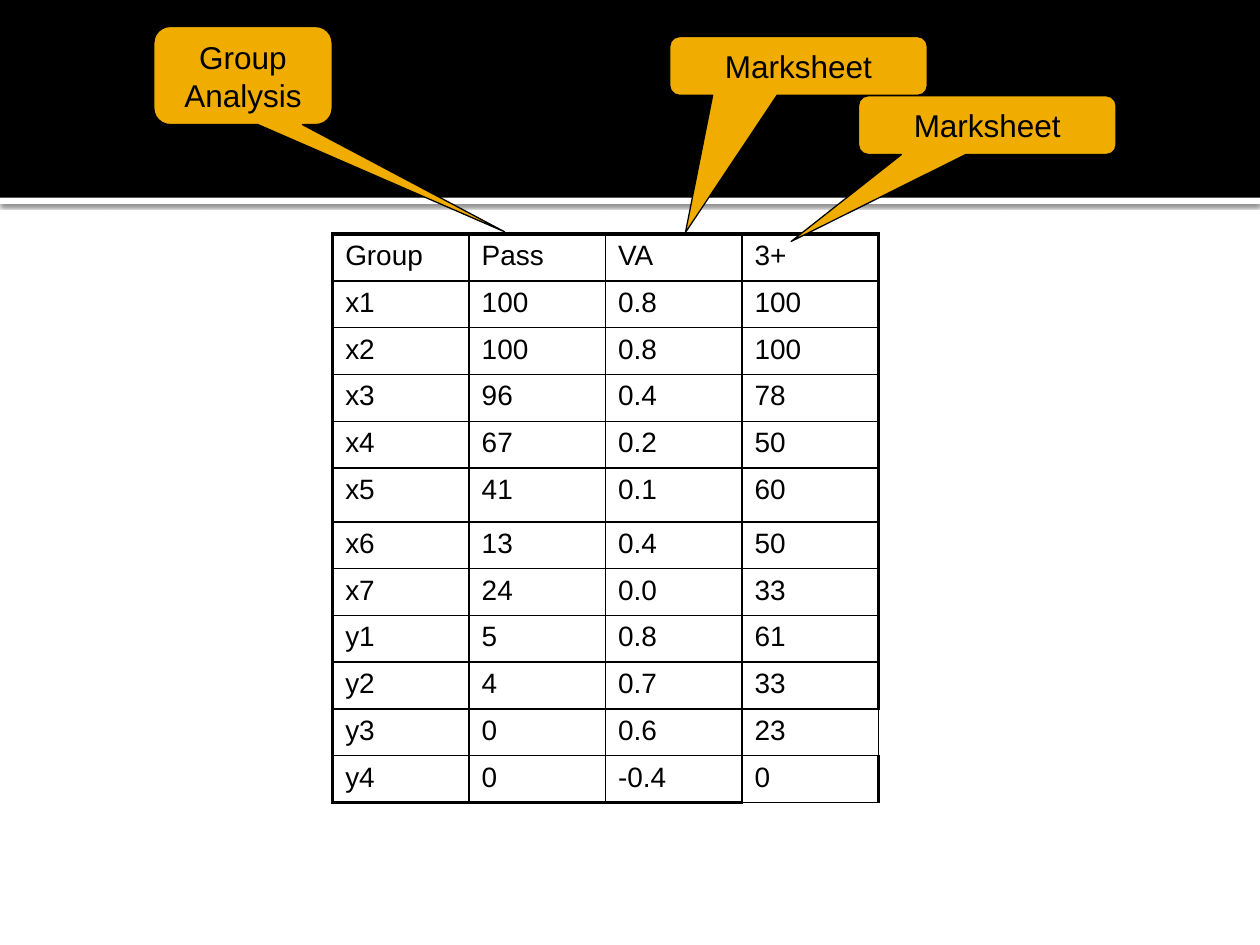
import pptx
import pptx.util
import pptx.dml.color
import pptx.enum.shapes
import pptx.enum.text
import pptx.oxml
import pptx.oxml.ns

Pt = pptx.util.Pt
SHAPES = pptx.enum.shapes.MSO_SHAPE
COLORS = {"ink": "000000", "paper": "FFFFFF", "callout": "F0AD00"}
FONT = "Arial"

ROWS = [
    ("Group", "Pass", "VA", "3+"),
    ("x1", "100", "0.8", "100"),
    ("x2", "100", "0.8", "100"),
    ("x3", "96", "0.4", "78"),
    ("x4", "67", "0.2", "50"),
    ("x5", "41", "0.1", "60"),
    ("x6", "13", "0.4", "50"),
    ("x7", "24", "0.0", "33"),
    ("y1", "5", "0.8", "61"),
    ("y2", "4", "0.7", "33"),
    ("y3", "0", "0.6", "23"),
    ("y4", "0", "-0.4", "0"),
]
# Text, (left, top, width, height), tip of the pointer
CALLOUTS = [
    ("Group\nAnalysis", (87.9, 15.2, 101.9, 56.0), (288.4, 132.5)),
    ("Marksheet", (382.7, 20.9, 147.2, 33.6), (391.7, 132.9)),
    ("Marksheet", (490.6, 54.7, 147.2, 33.6), (452.1, 138.0)),
]
TABLE_LEFT, TABLE_TOP = 190.1, 133.8
COLUMN_WIDTH, ROW_HEIGHT = 78, 26.75
TALL_ROW, TALL_HEIGHT = 5, 30.7
THIN, THICK = 1, 2.25
DRAWING = pptx.oxml.ns.nsdecls("a")


def color(name):
    return pptx.dml.color.RGBColor.from_string(COLORS[name])


def add_shape(slide, preset, box, fill):
    shape = slide.shapes.add_shape(preset, *map(Pt, box))
    shape.shadow.inherit = False
    shape.fill.solid()
    shape.fill.fore_color.rgb = color(fill)
    shape.line.fill.background()
    return shape


def format_text(frame, size):
    for para in frame.paragraphs:
        for span in para.runs:
            span.font.name = FONT
            span.font.size = Pt(size)
            span.font.color.rgb = color("ink")


def set_borders(cell, widths):
    properties = cell._tc.get_or_add_tcPr()
    for side, width in widths.items():
        properties.append(pptx.oxml.parse_xml(
            f'<a:ln{side} {DRAWING} w="{int(Pt(width))}"><a:solidFill>'
            f'<a:srgbClr val="{COLORS["ink"]}"/></a:solidFill></a:ln{side}>'))


def add_header(slide):
    strip = add_shape(slide, SHAPES.RECTANGLE, (0, 113, 720, 3.6), "paper")
    effects = strip._element.spPr.find(pptx.oxml.ns.qn("a:effectLst"))
    effects.append(pptx.oxml.parse_xml(
        f'<a:outerShdw {DRAWING} blurRad="{int(Pt(2.5))}" dist="{int(Pt(0.8))}" '
        f'dir="5400000" rotWithShape="0"><a:srgbClr val="{COLORS["ink"]}">'
        '<a:alpha val="60000"/></a:srgbClr></a:outerShdw>'))
    add_shape(slide, SHAPES.RECTANGLE, (0, 0, 720, 113), "ink")


def add_marks_table(slide):
    heights = [TALL_HEIGHT if i == TALL_ROW else ROW_HEIGHT for i in range(len(ROWS))]
    columns = len(ROWS[0])
    table = slide.shapes.add_table(
        len(ROWS), columns, Pt(TABLE_LEFT), Pt(TABLE_TOP),
        Pt(COLUMN_WIDTH * columns), Pt(sum(heights))).table
    table.first_row = table.horz_banding = False
    for column in table.columns:
        column.width = Pt(COLUMN_WIDTH)
    last_row, last_column = len(ROWS) - 1, columns - 1
    for r, values in enumerate(ROWS):
        table.rows[r].height = Pt(heights[r])
        for c, value in enumerate(values):
            cell = table.cell(r, c)
            cell.text_frame.text = value
            format_text(cell.text_frame, 16)
            para = cell.text_frame.paragraphs[0]
            para._p.get_or_add_pPr().append(pptx.oxml.parse_xml(
                f'<a:spcBef {DRAWING}><a:spcPct val="20000"/></a:spcBef>'))
            # Thick outer frame, left thin beside y3 and under the last cell
            thick = {
                "L": c == 0,
                "R": c == last_column and values[0] != "y3",
                "T": r == 0,
                "B": r == last_row and c != last_column,
            }
            set_borders(cell, {side: THICK if on else THIN for side, on in thick.items()})
            cell.fill.background()


def add_callout(slide, text, box, tip):
    left, top, width, height = box
    callout = add_shape(slide, SHAPES.ROUNDED_RECTANGULAR_CALLOUT, box, "callout")
    callout.adjustments[0] = (tip[0] - left) / width - 0.5
    callout.adjustments[1] = (tip[1] - top) / height - 0.5
    callout.adjustments[2] = 0.167
    callout.line.color.rgb = color("ink")
    callout.line.width = Pt(0.75)
    frame = callout.text_frame
    frame.text = text
    frame.word_wrap = True
    frame.vertical_anchor = pptx.enum.text.MSO_ANCHOR.MIDDLE
    for para in frame.paragraphs:
        para.alignment = pptx.enum.text.PP_ALIGN.CENTER
    format_text(frame, 18)


def main():
    deck = pptx.Presentation()
    deck.slide_width, deck.slide_height = Pt(720), Pt(540)
    page = deck.slides.add_slide(deck.slide_layouts[6])
    add_header(page)
    add_marks_table(page)
    for text, box, tip in CALLOUTS:
        add_callout(page, text, box, tip)
    deck.save("out.pptx")


if __name__ == "__main__":
    main()
